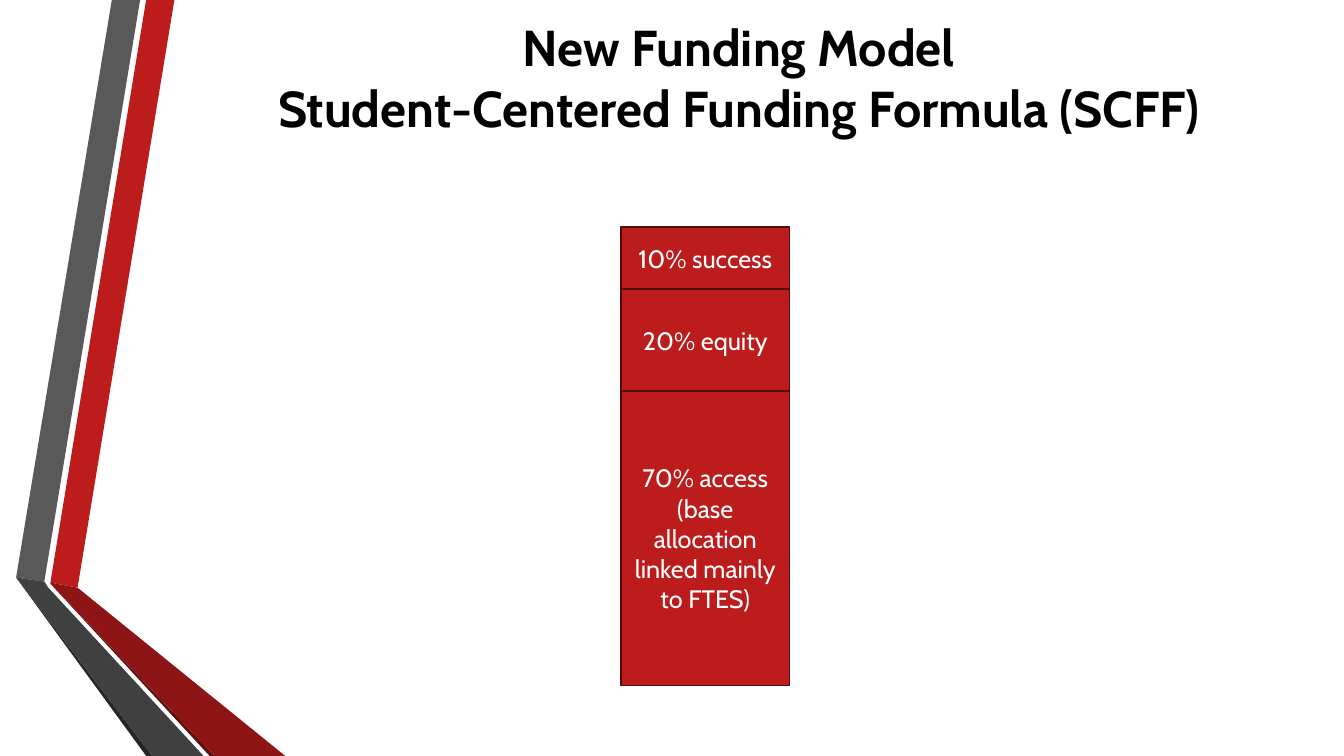
from pptx import Presentation
from pptx.dml.color import RGBColor
from pptx.enum.shapes import MSO_SHAPE
from pptx.enum.text import MSO_ANCHOR, PP_ALIGN
from pptx.util import Pt

PX = 9144  # EMU per px, 100 px to the inch
RECTANGLE = MSO_SHAPE.RECTANGLE
MIDDLE = MSO_ANCHOR.MIDDLE
CENTER = PP_ALIGN.CENTER
RED = "BC1C1C"


def rgb(value):
    return RGBColor.from_string(value)


def write_centered(shape, text, size, color, bold=False):
    frame = shape.text_frame
    frame.word_wrap = True
    frame.vertical_anchor = MIDDLE
    paragraph = frame.paragraphs[0]
    paragraph.text = text
    paragraph.alignment = CENTER
    for run in paragraph.runs:
        run.font.name = "Cabin"
        run.font.size = Pt(size)
        run.font.bold = bold
        run.font.color.rgb = rgb(color)


prs = Presentation()
prs.slide_width = 1333 * PX
prs.slide_height = 750 * PX
slide = prs.slides.add_slide(prs.slide_layouts[6])

# Folded ribbons on the left edge, back to front
ribbon_facets = [
    (RED, [(50, 578), (77, 583), (173, 0), (145, 0)]),
    ("595959", [(139, 0), (111, 0), (16, 573), (44, 577)]),
    ("262626", [(16, 573), (145, 750), (151, 750)]),
    ("5E0E0E", [(50, 579), (208, 750), (213, 750)]),
    ("8D1515", [(50, 578), (50, 579), (213, 750), (283, 750), (77, 583)]),
    ("404040", [(202, 750), (48, 583), (44, 577), (16, 573), (151, 750)]),
]
for color, corners in ribbon_facets:
    outline = slide.shapes.build_freeform(*corners[0], scale=PX)
    outline.add_line_segments(corners[1:], close=True)
    facet = outline.convert_to_shape()
    facet.shadow.inherit = False
    facet.fill.solid()
    facet.fill.fore_color.rgb = rgb(color)
    facet.line.fill.background()

# Title, with a line break inside one paragraph
title = slide.shapes.add_textbox(233 * PX, 25 * PX, 1000 * PX, 102 * PX)
write_centered(title, "New Funding Model\vStudent-Centered Funding Formula (SCFF)",
               36, "000000", bold=True)

# Funding shares, stacked from the top down
funding_shares = [
    ("10% success", 62),
    ("20% equity", 101),
    ("70% access (base allocation linked mainly to FTES)", 292),
]
top = 225
for label, height in funding_shares:
    share = slide.shapes.add_shape(RECTANGLE, 616 * PX, top * PX, 167 * PX, height * PX)
    share.shadow.inherit = False
    share.fill.solid()
    share.fill.fore_color.rgb = rgb(RED)
    share.line.color.rgb = rgb("520C0C")
    share.line.width = Pt(1.25)
    write_centered(share, label, 18, "FFFFFF")
    top += height

prs.save("out.pptx")
